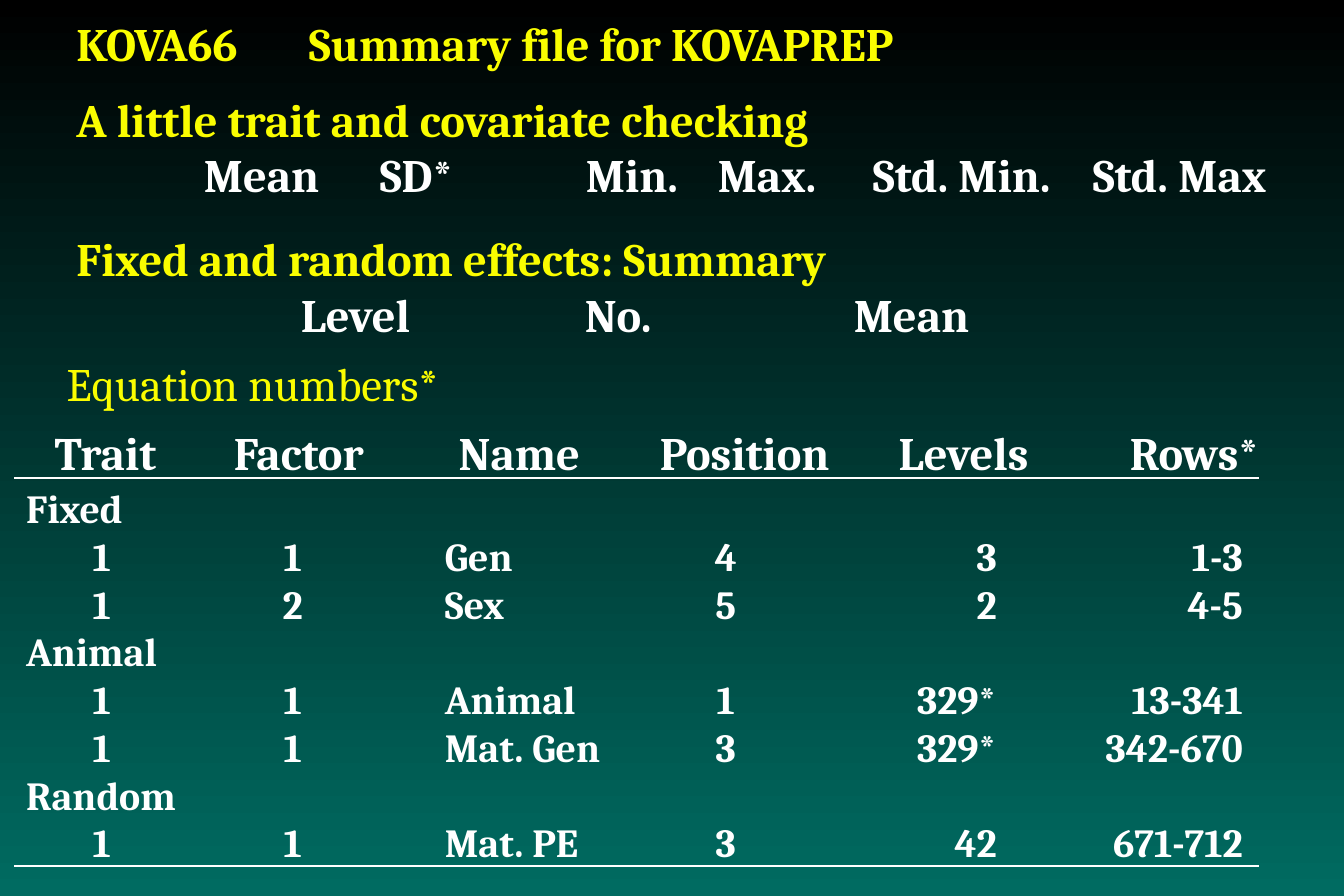
from lxml import etree
from pptx import Presentation
from pptx import util as u
from pptx.dml import color
from pptx.enum import shapes, text
from pptx.oxml import ns

WIDTH, HEIGHT = u.Inches(11.25), u.Inches(7.5)
INSET = u.Inches(0.1)
YELLOW, WHITE = "FAFD00", "FFFFFF"
TABLE_LEFT, TABLE_RIGHT = 1.07, 93.69
TABLE_TOP, TABLE_BOTTOM = 53.33, 96.67

# Tab stops: alignment and position in percent of the slide's width
TITLE_TABS = [("l", 22.99)]
STATS_TABS = [("l", x) for x in (15.18, 28.27, 43.6, 53.42, 64.96, 81.32)]
LEVEL_TABS = [("l", x) for x in (22.4, 43.53, 63.54)]
HEADER_TABS = [("l", x) for x in (17.41, 34.15, 49.11, 66.89, 84.08)]
BODY_TABS = [("ctr", 7.59), ("ctr", 21.8), ("l", 33.11),
             ("ctr", 54.02), ("r", 74.18), ("r", 92.49)]

EFFECTS = [
    ("Fixed", [("1", "1", "Gen", "4", "3", "1-3"),
               ("1", "2", "Sex", "5", "2", "4-5")]),
    ("Animal", [("1", "1", "Animal", "1", "329*", "13-341"),
                ("1", "1", "Mat. Gen", "3", "329*", "342-670")]),
    ("Random", [("1", "1", "Mat. PE", "3", "42", "671-712")]),
]


def rgb(value):
    return color.RGBColor.from_string(value)


def across(percent):
    return round(WIDTH * percent / 100)


def down(percent):
    return round(HEIGHT * percent / 100)


def set_background(slide):
    fill = slide.background.fill
    fill.gradient()
    fill.gradient_angle = 270
    for stop, value in zip(fill.gradient_stops, ("000000", "006B61")):
        stop.color.rgb = rgb(value)


def add_box(slide, left, top, width, height):
    """Add an empty text box, placed in percent of the slide's size."""
    sp = slide.shapes.add_textbox(across(left), down(top), across(width), down(height))
    tf = sp.text_frame
    tf.word_wrap = True
    tf.vertical_anchor = text.MSO_ANCHOR.TOP
    return sp


def add_text(sp, words, size=28, fill=WHITE, bold=True, spacing=None, tabs=()):
    """Write one paragraph; the first call uses the box's empty one."""
    tf = sp.text_frame
    p = tf.paragraphs[0] if not tf.text else tf.add_paragraph()
    if spacing:
        p.line_spacing = spacing
    r = p.add_run()
    r.text = words
    r.font.name = "Cambria"
    r.font.size = u.Pt(size)
    r.font.bold = bold
    r.font.color.rgb = rgb(fill)
    if tabs:
        tab_list = etree.SubElement(p._p.get_or_add_pPr(), ns.qn("a:tabLst"))
        for align, percent in tabs:
            position = across(percent) - sp.left - INSET
            etree.SubElement(tab_list, ns.qn("a:tab"), pos=str(position), algn=align)


def add_rule(slide, y):
    line = slide.shapes.add_connector(
        shapes.MSO_CONNECTOR.STRAIGHT,
        across(TABLE_LEFT), down(y), across(TABLE_RIGHT), down(y))
    line.line.color.rgb = rgb(WHITE)
    line.line.width = u.Pt(1)
    etree.SubElement(line._element.spPr, ns.qn("a:effectLst"))


def add_equation_table(slide):
    caption = add_box(slide, 4.09, 38.93, 51.11, 7.6)
    add_text(caption, "Equation numbers*", fill=YELLOW, bold=False)

    header = add_box(slide, 3.2, 46.67, 94.76, 7.6)
    add_text(header, "Trait\tFactor\tName\tPosition\tLevels\tRows*", tabs=HEADER_TABS)
    add_rule(slide, TABLE_TOP)

    body = add_box(slide, TABLE_LEFT, TABLE_TOP, 93.51, 44)
    for group, rows in EFFECTS:
        add_text(body, group, size=24)
        for row in rows:
            add_text(body, "\t" + "\t".join(row), size=24, tabs=BODY_TABS)
    add_rule(slide, TABLE_BOTTOM)


def add_summary(slide):
    sp = add_box(slide, 4.8, 1.07, 95.2, 37.73)
    add_text(sp, "KOVA66\tSummary file for KOVAPREP", fill=YELLOW, tabs=TITLE_TABS)
    add_text(sp, "A little trait and covariate checking", fill=YELLOW, spacing=1.35)
    add_text(sp, "\tMean\tSD*\tMin.\tMax.\tStd. Min.\tStd. Max", tabs=STATS_TABS)
    add_text(sp, "Fixed and random effects: Summary", fill=YELLOW, spacing=1.5)
    add_text(sp, "\tLevel\tNo.\tMean", tabs=LEVEL_TABS)


def main():
    prs = Presentation()
    prs.slide_width, prs.slide_height = WIDTH, HEIGHT
    slide = prs.slides.add_slide(prs.slide_layouts[6])
    set_background(slide)
    add_equation_table(slide)
    add_summary(slide)
    prs.save("out.pptx")


if __name__ == "__main__":
    main()
